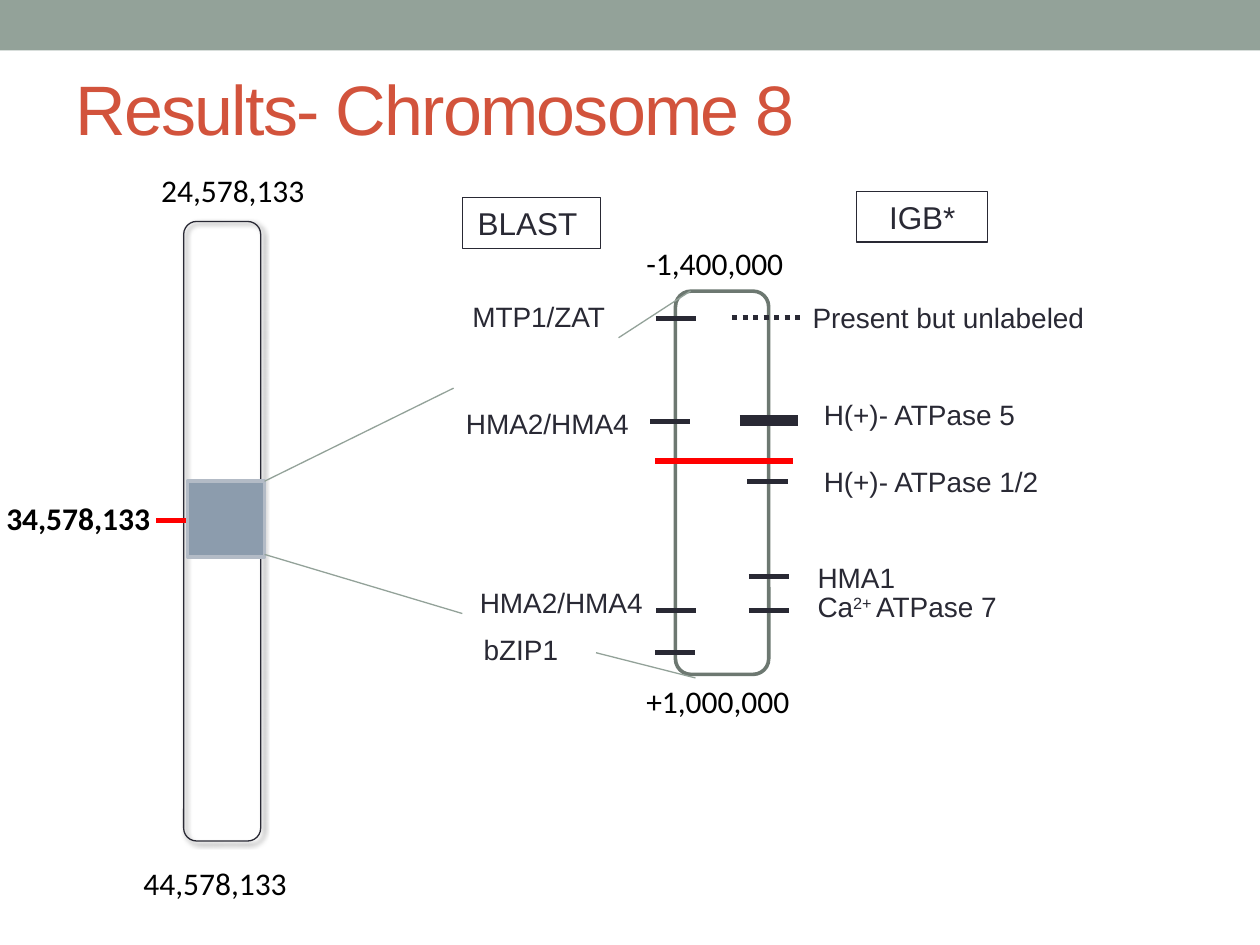
from lxml import etree
from pptx import Presentation
from pptx.dml.color import RGBColor
from pptx.enum import dml, shapes, text
from pptx.oxml.ns import qn
from pptx.util import Pt

INK, RED, SAGE, BLACK = "292934", "FF0000", "93A299", "000000"


def color(value):
    return RGBColor.from_string(value)


def add_box(slide, kind, left, top, width, height, fill=None, line=None, weight=0.75):
    shape = slide.shapes.add_shape(kind, Pt(left), Pt(top), Pt(width), Pt(height))
    shape.shadow.inherit = False
    if fill:
        shape.fill.solid()
        shape.fill.fore_color.rgb = color(fill)
    else:
        shape.fill.background()
    if line:
        shape.line.color.rgb = color(line)
        shape.line.width = Pt(weight)
    else:
        shape.line.fill.background()
    return shape


def add_shadow(shape):
    effects = shape._element.spPr.find(qn("a:effectLst"))
    shadow = etree.SubElement(effects, qn("a:outerShdw"), blurRad=str(Pt(3)),
                              dist=str(Pt(2)), dir="2700000", rotWithShape="0")
    shade = etree.SubElement(shadow, qn("a:srgbClr"), val=BLACK)
    etree.SubElement(shade, qn("a:alpha"), val="60000")


def add_run(paragraph, words, size, font="Arial", ink=INK, bold=False):
    run = paragraph.add_run()
    run.text = words
    run.font.size = Pt(size)
    run.font.name = font
    run.font.bold = bold
    run.font.color.rgb = color(ink)
    return run


def add_text_box(slide, left, top, width, height):
    box = slide.shapes.add_textbox(Pt(left), Pt(top), Pt(width), Pt(height))
    box.text_frame.word_wrap = True
    return box.text_frame


def add_gene(slide, words, left, top, width=119):
    paragraph = add_text_box(slide, left, top, width, 26.6).paragraphs[0]
    add_run(paragraph, words, 16)
    return paragraph


def add_position(slide, words, left, top, width=104):
    paragraph = add_text_box(slide, left, top, width, 29).paragraphs[0]
    return paragraph, add_run(paragraph, words, 18, "Calibri", BLACK)


def add_heading(slide, words, left, top, width):
    box = add_box(slide, shapes.MSO_SHAPE.RECTANGLE, left, top, width, 29, line=INK)
    paragraph = box.text_frame.paragraphs[0]
    paragraph.alignment = text.PP_ALIGN.CENTER
    add_run(paragraph, words, 18)


def add_line(slide, start, end, ink=INK, weight=3.0):
    line = slide.shapes.add_connector(
        shapes.MSO_CONNECTOR.STRAIGHT, *[Pt(value) for value in (*start, *end)])
    line.line.color.rgb = color(ink)
    line.line.width = Pt(weight)
    etree.SubElement(line._element.spPr, qn("a:effectLst"))
    return line


def add_mark(slide, left, y, width=23, ink=INK, weight=3.0):
    return add_line(slide, (left, y), (left + width, y), ink, weight)


def main():
    presentation = Presentation()
    presentation.slide_width, presentation.slide_height = Pt(720), Pt(540)
    slide = presentation.slides.add_slide(presentation.slide_layouts[6])
    rectangle = shapes.MSO_SHAPE.RECTANGLE
    rounded = shapes.MSO_SHAPE.ROUNDED_RECTANGLE

    # Top band and title
    add_box(slide, rectangle, 0, 0, 720, 28.8, SAGE)
    frame = add_text_box(slide, 36, 22.3, 648, 77.8)
    frame.vertical_anchor = text.MSO_ANCHOR.MIDDLE
    title = add_run(frame.paragraphs[0], "Results- Chromosome 8", 40, ink="D2533C")
    title._r.get_or_add_rPr().set("spc", "-100")

    # Whole chromosome with its positions
    add_shadow(add_box(slide, rounded, 105, 126.6, 44, 354, line=INK))
    add_mark(slide, 89.3, 297.4, 62, RED)
    add_position(slide, "24,578,133", 85, 94.3)
    add_position(slide, "44,578,133", 74.9, 490.3)
    middle, run = add_position(slide, "34,578,133", -5.8, 281.5, 101)
    middle.alignment = text.PP_ALIGN.CENTER
    run.font.bold = True
    add_box(slide, rectangle, 107.2, 275, 44, 43.2, "8C9CAD", "B3BBC6", 2.08)

    # Enlarged region
    add_box(slide, rounded, 386, 166.4, 53.3, 219, "FFFFFF", "6D7871", 2.08)
    add_position(slide, "-1,400,000", 362.2, 136.1)
    add_position(slide, "+1,000,000", 362.2, 385.9)
    add_mark(slide, 374.4, 263.5, 78.5, RED)

    # Method headings
    add_heading(slide, "BLAST ", 264.2, 113, 79.2)
    add_heading(slide, "IGB*", 489.6, 109.4, 74.9)

    # BLAST genes: label, its left and top, mark left and height
    for words, left, top, mark, y in (
            ("MTP1/ZAT", 262.8, 167.8, 374.7, 182),
            ("HMA2/HMA4", 259.2, 229, 371.5, 241),
            ("HMA2/HMA4", 267.1, 331.2, 375, 349),
            ("bZIP1", 269.3, 357.8, 374.4, 373)):
        add_gene(slide, words, left, top)
        add_mark(slide, mark, y)

    # IGB genes: label, its left and top, mark left, height, width and weight
    for words, left, top, mark, y, width, weight in (
            ("H(+)- ATPase 5", 463.7, 223.9, 422.8, 240.2, 33, 6),
            ("H(+)- ATPase 1/2", 463.7, 262.1, 427, 275, 23, 3),
            ("HMA1", 460.1, 316.8, 428, 329.6, 23, 3)):
        add_gene(slide, words, left, top, 172)
        add_mark(slide, mark, y, width, weight=weight)

    add_gene(slide, "Present but unlabeled", 457.2, 168.5, 184)
    unlabeled = add_mark(slide, 418.3, 181.4, 41.8)
    unlabeled.line.dash_style = dml.MSO_LINE.ROUND_DOT

    calcium = add_gene(slide, "Ca", 460.1, 333.4)
    charge = add_run(calcium, "2+ ", 16)
    charge._r.get_or_add_rPr().set("baseline", "30000")
    add_run(calcium, "ATPase 7", 16)
    add_mark(slide, 428, 349)

    # Zoom lines
    for start, end in (
            ((151.2, 316.8), (264.2, 350.6)),
            ((151.2, 275), (259.2, 221.8)),
            ((340.6, 373), (397.4, 387.4)),
            ((353.5, 193), (394.6, 166.3))):
        add_line(slide, start, end, SAGE, 0.75)

    presentation.save("out.pptx")


if __name__ == "__main__":
    main()
